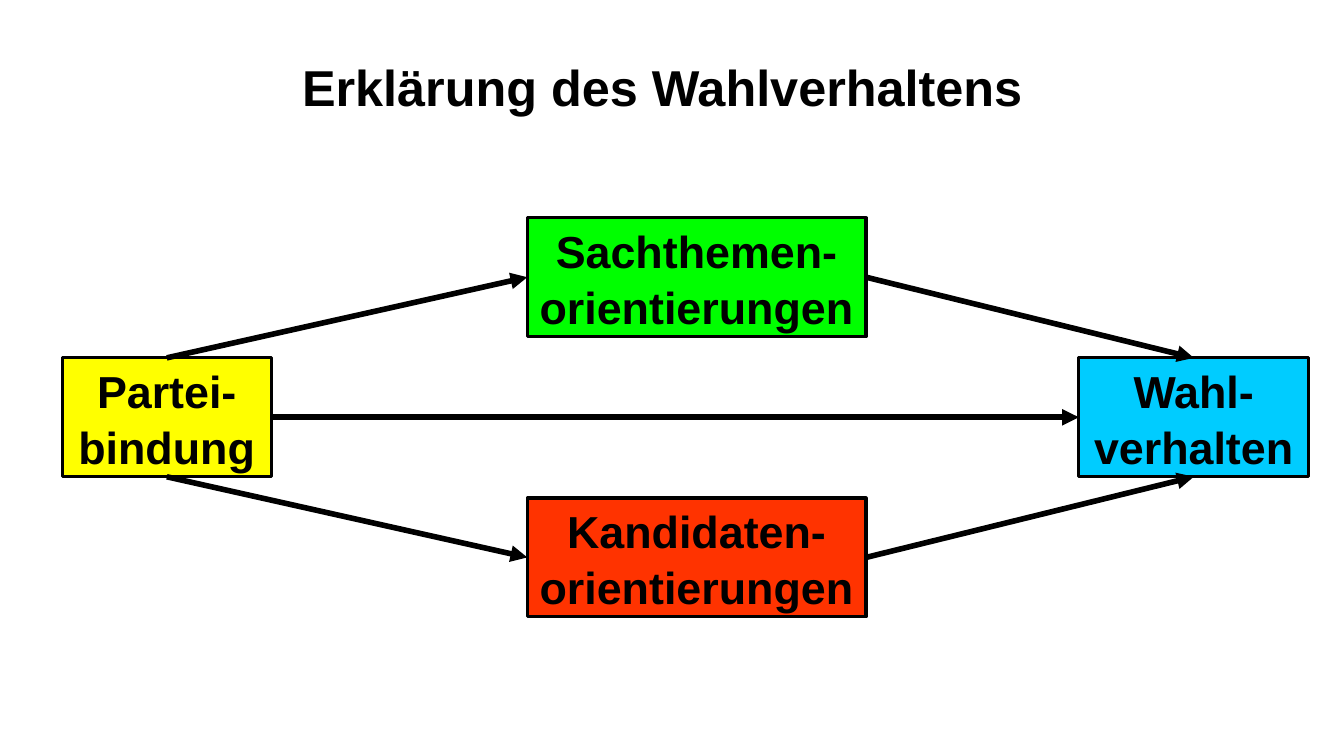
from pptx import Presentation
from pptx.dml.color import RGBColor
from pptx.enum.shapes import MSO_CONNECTOR, MSO_SHAPE
from pptx.enum.text import MSO_ANCHOR, MSO_AUTO_SIZE, PP_ALIGN
from pptx.oxml.ns import qn
from pptx.util import Inches, Pt
from lxml import etree

RECT = MSO_SHAPE.RECTANGLE
LINE = MSO_CONNECTOR.STRAIGHT
MIDDLE = MSO_ANCHOR.MIDDLE
FIXED = MSO_AUTO_SIZE.NONE
CENTER = PP_ALIGN.CENTER
TOP, LEFT, BOTTOM, RIGHT = range(4)
HIGH = 1.18
COLORS = {
    "ink": "000000",
    "party": "FFFF00",
    "issue": "00FF00",
    "person": "FF3300",
    "vote": "00CCFF",
}


def color(name):
    """Return the named colour."""
    return RGBColor.from_string(COLORS[name])


def write(shape, text, size):
    """Put bold centred text into a shape."""
    frame = shape.text_frame
    frame.text = text
    frame.word_wrap = True
    frame.auto_size = FIXED
    frame.vertical_anchor = MIDDLE
    par = frame.paragraphs[0]
    par.alignment = CENTER
    par.font.name = "Arial"
    par.font.size = Pt(size)
    par.font.bold = True
    par.font.color.rgb = color("ink")
    return par


def add_title(slide, text):
    """Place and fill the title."""
    title = slide.shapes.title
    title.left, title.top = Inches(1.64), Inches(0.5)
    title.width, title.height = Inches(10), Inches(0.71)
    write(title, text, 36)


def add_box(slide, text, fill, left, top, width):
    """Add a filled box with a label."""
    box = slide.shapes.add_shape(
        RECT, Inches(left), Inches(top), Inches(width), Inches(HIGH))
    box.shadow.inherit = False
    box.fill.solid()
    box.fill.fore_color.rgb = color(fill)
    box.line.color.rgb = color("ink")
    box.line.width = Pt(2.25)
    write(box, text, 32).line_spacing = 1.05
    return box


def add_arrow(slide, start, side, end, goal):
    """Join two box sides with an arrow."""
    arrow = slide.shapes.add_connector(LINE, 0, 0, 0, 0)
    arrow.begin_connect(start, side)
    arrow.end_connect(end, goal)
    arrow.line.color.rgb = color("ink")
    arrow.line.width = Pt(4)
    tail = etree.SubElement(arrow.line._get_or_add_ln(), qn("a:tailEnd"))
    tail.set("type", "triangle")
    etree.SubElement(arrow._element.spPr, qn("a:effectLst"))


def main():
    """Build and save the slide."""
    deck = Presentation()
    deck.slide_width, deck.slide_height = Inches(13.33), Inches(7.5)
    slide = deck.slides.add_slide(deck.slide_layouts[5])
    add_title(slide, "Erklärung des Wahlverhaltens ")
    vote = add_box(slide, "Wahl-\vverhalten", "vote", 10.7, 3.55, 2.28)
    person = add_box(slide, "Kandidaten-orientierungen", "person", 5.23, 4.94, 3.36)
    party = add_box(slide, "Partei-\vbindung", "party", 0.62, 3.55, 2.07)
    issue = add_box(slide, "Sachthemen-orientierungen", "issue", 5.23, 2.16, 3.36)
    add_arrow(slide, party, RIGHT, vote, LEFT)
    for box, side in ((issue, TOP), (person, BOTTOM)):
        add_arrow(slide, party, side, box, LEFT)
        add_arrow(slide, box, RIGHT, vote, side)
    deck.save("out.pptx")


if __name__ == "__main__":
    main()
